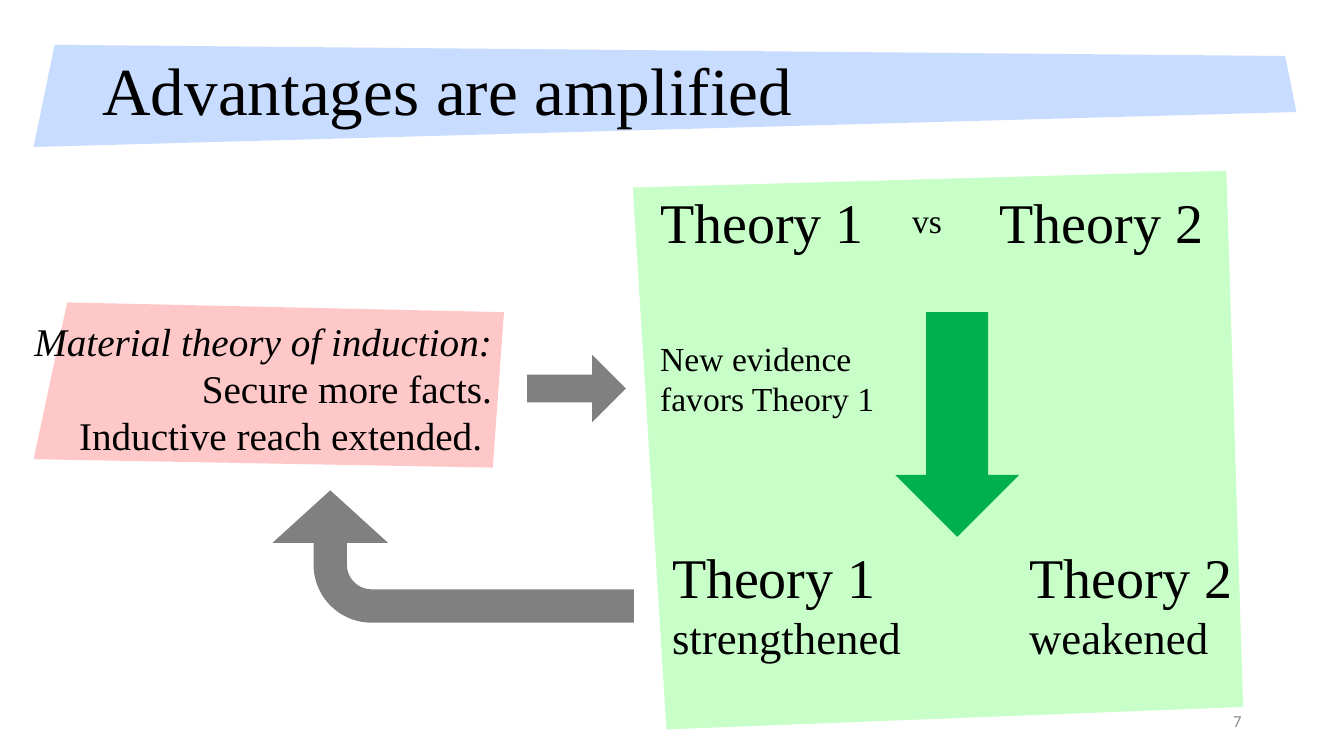
from dataclasses import dataclass

from pptx import Presentation
from pptx import util as u
from pptx.dml.color import RGBColor
from pptx.enum import shapes, text

Pt = u.Pt
LEFT, RIGHT = text.PP_ALIGN.LEFT, text.PP_ALIGN.RIGHT
MIDDLE = text.MSO_ANCHOR.MIDDLE


@dataclass(frozen=True)
class Theme:
    serif: str = "Times New Roman"
    sans: str = "Calibri"
    ink: str = "000000"
    muted: str = "8C8C8C"
    blue: str = "C8DCFF"
    green: str = "C8FFC8"
    pink: str = "FFC8C8"
    grey: str = "808080"
    accent: str = "00B050"
    title: int = 48
    theory: int = 40
    verdict: int = 32
    method: int = 28
    note: int = 24
    number: int = 12


class SlideBuilder:
    def __init__(self, slide, theme):
        self.slide = slide
        self.theme = theme

    def paint(self, sp, color):
        sp.fill.solid()
        sp.fill.fore_color.rgb = RGBColor.from_string(color)
        sp.line.fill.background()
        sp.shadow.inherit = False

    def format(self, p, size, font=None, color=None, italic=False, align=LEFT):
        p.alignment = align
        for r in p.runs:
            r.font.name = font or self.theme.serif
            r.font.size = Pt(size)
            r.font.italic = italic
            r.font.color.rgb = RGBColor.from_string(color or self.theme.ink)

    def place(self, sp, box):
        sp.left, sp.top, sp.width, sp.height = (Pt(v) for v in box)

    def panel(self, points, color):
        builder = self.slide.shapes.build_freeform(*points[0], scale=Pt(1))
        builder.add_line_segments(points[1:], close=True)
        self.paint(builder.convert_to_shape(), color)

    def title(self, wording, box):
        sp = self.slide.shapes.title
        self.place(sp, box)
        tf = sp.text_frame
        tf.text = wording
        tf.auto_size = text.MSO_AUTO_SIZE.NONE
        tf.vertical_anchor = MIDDLE
        p = tf.paragraphs[0]
        p.line_spacing = 0.9
        self.format(p, self.theme.title)
        # Bring the title in front of its panel
        sp.element.getparent().append(sp.element)

    def label(self, lines, box, wrap=False, anchor=text.MSO_ANCHOR.TOP, **style):
        """Each line is (wording, size) or (wording, size, italic)."""
        sp = self.slide.shapes.add_textbox(*(Pt(v) for v in box))
        tf = sp.text_frame
        tf.word_wrap = wrap
        tf.vertical_anchor = anchor
        for i, (wording, size, *italic) in enumerate(lines):
            p = tf.add_paragraph() if i else tf.paragraphs[0]
            p.text = wording
            self.format(p, size, italic=bool(italic and italic[0]), **style)

    def arrow(self, kind, box, color, adjustments=(), rotation=0):
        sp = self.slide.shapes.add_shape(kind, *(Pt(v) for v in box))
        for i, value in enumerate(adjustments):
            sp.adjustments[i] = value
        sp.rotation = rotation
        self.paint(sp, color)


def main():
    prs = Presentation()
    prs.slide_width, prs.slide_height = Pt(960), Pt(540)
    theme = Theme()
    s = SlideBuilder(prs.slides.add_slide(prs.slide_layouts[5]), theme)
    kinds = shapes.MSO_SHAPE

    # Title band, comparison panel and title
    s.panel([(39, 31.5), (917.5, 40.5), (926, 80), (24.5, 105)], theme.blue)
    s.panel([(451.5, 134), (875.5, 121.5), (888.5, 505), (476.5, 521)], theme.green)
    s.title("Advantages are amplified", (66, 29, 612, 76.5))

    # Slide number
    s.label([("7", theme.number)], (843, 500.5, 51, 29), wrap=True, anchor=MIDDLE,
            font=theme.sans, color=theme.muted, align=RIGHT)

    # Rival theories, before and after the evidence
    s.label([("vs", theme.note)], (644.5, 139, 36, 36))
    rivals = [("Theory 1", 464.5, "strengthened", 473, 180),
              ("Theory 2", 707, "weakened", 728, 161.5)]
    for name, before_x, verdict, after_x, after_width in rivals:
        s.label([(name, theme.theory)], (before_x, 130.5, 161.5, 55.5))
        s.label([(name, theme.theory), (verdict, theme.verdict)],
                (after_x, 384, after_width, 94))

    # New evidence
    s.label([("New evidence favors Theory 1", theme.note)],
            (464.5, 237.5, 174, 65.5), wrap=True)
    s.arrow(kinds.DOWN_ARROW, (639.5, 223, 88.5, 160.5), theme.accent)

    # Material theory of induction
    s.panel([(47.5, 216), (360, 223), (352, 333.5), (24.5, 327.5)], theme.pink)
    s.label([("Material theory of induction:", theme.method, True),
             ("Secure more facts.", theme.method),
             ("Inductive reach extended. ", theme.method)],
            (3, 223, 355.5, 109), wrap=True, align=RIGHT)

    # Feedback loop
    s.arrow(kinds.RIGHT_ARROW, (376.5, 253.5, 70.5, 48), theme.grey, (0.416, 0.5))
    s.arrow(kinds.BENT_ARROW, (276.5, 268.5, 94.5, 258), theme.grey,
            (0.252, 0.436, 0.396, 0.438), rotation=270)

    prs.save("out.pptx")


if __name__ == "__main__":
    main()
